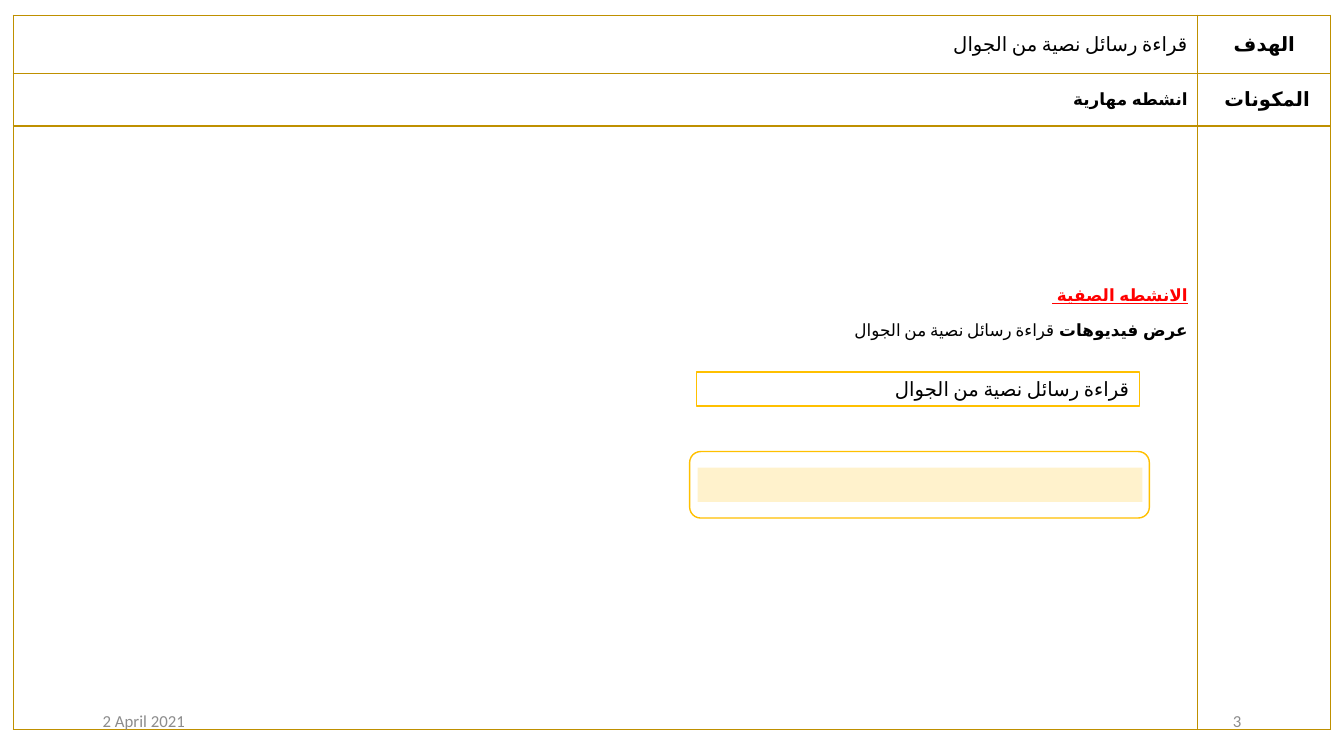
from dataclasses import dataclass
from typing import Optional

from lxml.etree import SubElement
from pptx import Presentation
from pptx.dml.color import RGBColor
from pptx.enum.lang import MSO_LANGUAGE_ID as Language
from pptx.enum.shapes import MSO_SHAPE as Preset
from pptx.enum.text import MSO_ANCHOR as Anchor, MSO_AUTO_SIZE as AutoSize, PP_ALIGN as Align
from pptx.oxml import parse_xml
from pptx.oxml.ns import nsdecls, qn
from pptx.util import Emu, Inches, Pt

GRID_COLUMNS, GRID_ROWS = 1333, 750
SLIDE_WIDTH, SLIDE_HEIGHT = Inches(13.33), Inches(7.5)


@dataclass(frozen=True)
class Theme:
    body_font: str = "Calibri"
    heading_font: str = "Arial"
    black: str = "000000"
    white: str = "FFFFFF"
    red: str = "FF0000"
    grey: str = "8C8C8C"
    gold: str = "FFC000"
    dark_gold: str = "BF9000"
    cream: str = "FFF2CC"
    large: int = 14
    small: int = 12
    line: int = 1


THEME = Theme()


@dataclass(frozen=True)
class Box:
    column: int
    row: int
    columns: int
    rows: int


@dataclass(frozen=True)
class Style:
    size: int
    font: str = THEME.body_font
    color: str = THEME.black
    bold: bool = False
    underline: bool = False


@dataclass(frozen=True)
class Line:
    runs: tuple[tuple[str, Style], ...]
    align: Align = Align.RIGHT
    rtl: bool = True
    space_before: int = 0


@dataclass(frozen=True)
class Panel:
    box: Box
    preset: Preset
    fill: str
    outline: Optional[str] = None
    lines: tuple[Line, ...] = ()


@dataclass(frozen=True)
class Footer:
    box: Box
    text: str
    align: Align


READING = "قراءة رسائل نصية من الجوال "
PLAIN = Style(THEME.large)
HEADING = Style(THEME.large, THEME.heading_font, bold=True)
STRONG = Style(THEME.small, THEME.heading_font, bold=True)
ACTIVITY = Style(THEME.small, THEME.heading_font, THEME.red, True, True)
FOOTNOTE = Style(THEME.small, color=THEME.grey)
READING_LINE = Line(((READING, PLAIN),))

TABLE_BOX = Box(13, 15, 1307, 709)
TABLE_COLUMNS = (1175, 132)
TABLE_ROWS = (58, 52, 599)
ACTIVITIES_TOP = 159
TABLE_CELLS = (
    ((READING_LINE,), (Line((("الهدف", HEADING),), Align.CENTER),)),
    ((Line((("انشطه مهارية", STRONG),)),), (Line((("المكونات ", HEADING),), Align.CENTER),)),
    (
        (
            Line((("الانشطه الصفية ", ACTIVITY),)),
            Line((("عرض فيديوهات ", STRONG), (READING, Style(THEME.small))), space_before=11),
        ),
        (),
    ),
)
PANELS = (
    Panel(Box(691, 369, 439, 34), Preset.RECTANGLE, THEME.white, THEME.gold, (READING_LINE,)),
    Panel(Box(684, 448, 456, 66), Preset.ROUNDED_RECTANGLE, THEME.white, THEME.gold),
    Panel(Box(692, 464, 441, 34), Preset.RECTANGLE, THEME.cream),
)
FOOTERS = (
    Footer(Box(92, 695, 300, 40), "2 April 2021", Align.LEFT),
    Footer(Box(941, 695, 300, 40), "3", Align.RIGHT),
)


def across(columns: int) -> Emu:
    return Emu(SLIDE_WIDTH * columns // GRID_COLUMNS)


def down(rows: int) -> Emu:
    return Emu(SLIDE_HEIGHT * rows // GRID_ROWS)


def place(box: Box) -> tuple[Emu, Emu, Emu, Emu]:
    return across(box.column), down(box.row), across(box.columns), down(box.rows)


def write(text_frame, lines: tuple[Line, ...]) -> None:
    for index, line in enumerate(lines):
        paragraph = text_frame.paragraphs[0] if index == 0 else text_frame.add_paragraph()
        paragraph.alignment = line.align
        paragraph.space_before = Pt(line.space_before)
        if line.rtl:
            paragraph._p.get_or_add_pPr().set("rtl", "1")
        for text, style in line.runs:
            run = paragraph.add_run()
            run.text = text
            run.font.name = style.font
            run.font.size = Pt(style.size)
            run.font.bold = style.bold
            run.font.underline = style.underline
            run.font.color.rgb = RGBColor.from_string(style.color)
            run.font.language_id = Language.ARABIC if line.rtl else Language.ENGLISH_US
            SubElement(run._r.get_or_add_rPr(), qn("a:cs")).set("typeface", style.font)


def outline_cell(cell) -> None:
    properties = cell._tc.get_or_add_tcPr()
    for index, side in enumerate(("lnL", "lnR", "lnT", "lnB")):
        border = parse_xml(
            f'<a:{side} {nsdecls("a")} w="{Pt(THEME.line)}"><a:solidFill>'
            f'<a:srgbClr val="{THEME.dark_gold}"/></a:solidFill></a:{side}>'
        )
        properties.insert(index, border)


def draw_table(slide) -> None:
    frame = slide.shapes.add_table(len(TABLE_ROWS), len(TABLE_COLUMNS), *place(TABLE_BOX))
    table = frame.table
    table.first_row = table.horz_banding = False
    for column, width in zip(table.columns, TABLE_COLUMNS):
        column.width = across(width)
    for row, height, contents in zip(table.rows, TABLE_ROWS, TABLE_CELLS):
        row.height = down(height)
        for cell, lines in zip(row.cells, contents):
            cell.fill.background()
            cell.vertical_anchor = Anchor.MIDDLE
            outline_cell(cell)
            write(cell.text_frame, lines)
    activities = table.cell(2, 0)
    activities.vertical_anchor = Anchor.TOP
    activities.margin_top = down(ACTIVITIES_TOP)


def draw_panel(slide, panel: Panel) -> None:
    shape = slide.shapes.add_shape(panel.preset, *place(panel.box))
    shape.shadow.inherit = False
    shape.fill.solid()
    shape.fill.fore_color.rgb = RGBColor.from_string(panel.fill)
    if panel.outline:
        shape.line.color.rgb = RGBColor.from_string(panel.outline)
        shape.line.width = Pt(THEME.line)
    else:
        shape.line.fill.background()
    if panel.lines:
        shape.text_frame.word_wrap = True
        shape.text_frame.auto_size = AutoSize.SHAPE_TO_FIT_TEXT
        shape.text_frame.vertical_anchor = Anchor.TOP
        write(shape.text_frame, panel.lines)


def draw_footer(slide, footer: Footer) -> None:
    text_frame = slide.shapes.add_textbox(*place(footer.box)).text_frame
    text_frame.word_wrap = True
    text_frame.vertical_anchor = Anchor.MIDDLE
    write(text_frame, (Line(((footer.text, FOOTNOTE),), footer.align, rtl=False),))


def main() -> None:
    presentation = Presentation()
    presentation.slide_width, presentation.slide_height = SLIDE_WIDTH, SLIDE_HEIGHT
    slide = presentation.slides.add_slide(presentation.slide_layouts[6])
    draw_table(slide)
    for panel in PANELS:
        draw_panel(slide, panel)
    for footer in FOOTERS:
        draw_footer(slide, footer)
    presentation.save("out.pptx")


if __name__ == "__main__":
    main()
